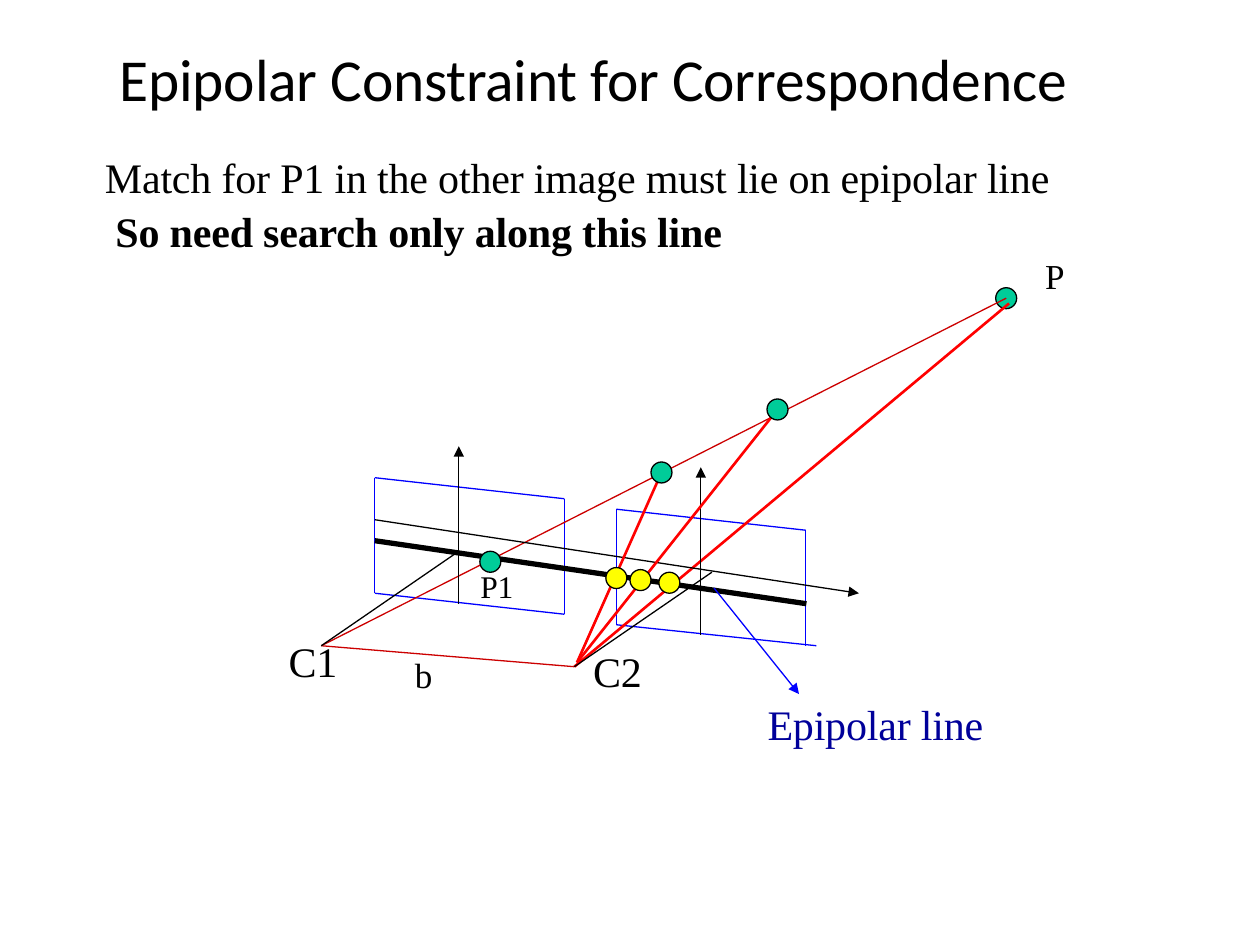
from dataclasses import dataclass

from lxml.etree import SubElement
from pptx import Presentation
from pptx.dml.color import RGBColor
from pptx.enum.shapes import MSO_CONNECTOR as Connector, MSO_SHAPE as Shape
from pptx.enum.text import MSO_ANCHOR as Anchor, PP_ALIGN as Align
from pptx.oxml.ns import qn
from pptx.util import Inches, Pt

COLUMNS, ROWS = 120, 90
WIDTH, HEIGHT = Inches(10), Inches(7.5)
BLACK, BLUE, NAVY = "000000", "0000FF", "00009A"
RED, DARK_RED, GREEN, YELLOW = "FF0000", "CC0000", "00CC99", "FFFF00"
SERIF = "Times New Roman"
DOT_SIZE = 2
PLANE_WIDTH, PLANE_HEIGHT, PLANE_SKEW = 18.05, 11, 2

Point = tuple[float, float]


@dataclass
class Line:
    start: Point
    end: Point
    color: str = BLACK
    weight: float = 0.75
    arrow: bool = False


@dataclass
class Dot:
    center: Point
    color: str


@dataclass
class Label:
    text: str
    corner: Point
    size: Point
    points: float = 24
    color: str = BLACK


def column(count: float) -> int:
    return round(WIDTH * count / COLUMNS)


def row(count: float) -> int:
    return round(HEIGHT * count / ROWS)


def area(corner: Point, size: Point) -> tuple[int, int, int, int]:
    return column(corner[0]), row(corner[1]), column(size[0]), row(size[1])


def rgb(color: str) -> RGBColor:
    return RGBColor.from_string(color)


def draw_line(page, line: Line) -> None:
    (x1, y1), (x2, y2) = line.start, line.end
    connector = page.shapes.add_connector(
        Connector.STRAIGHT, column(x1), row(y1), column(x2), row(y2))
    connector.line.color.rgb = rgb(line.color)
    connector.line.width = Pt(line.weight)
    if line.arrow:
        SubElement(connector.line._get_or_add_ln(), qn("a:tailEnd"), type="triangle")
    SubElement(connector._element.spPr, qn("a:effectLst"))


def draw_dot(page, dot: Dot) -> None:
    corner = dot.center[0] - DOT_SIZE / 2, dot.center[1] - DOT_SIZE / 2
    oval = page.shapes.add_shape(Shape.OVAL, *area(corner, (DOT_SIZE, DOT_SIZE)))
    oval.shadow.inherit = False
    oval.fill.solid()
    oval.fill.fore_color.rgb = rgb(dot.color)
    oval.line.color.rgb = rgb(BLACK)
    oval.line.width = Pt(0.75)


def plane_edges(corner: Point, overhang: float = 0) -> list[Line]:
    """Skewed image plane; its lower edge may run past the right corner."""
    left, top = corner
    right, bottom = left + PLANE_WIDTH, top + PLANE_HEIGHT
    edges = [
        ((left, top), (left, bottom)),
        ((left, top), (right, top + PLANE_SKEW)),
        ((right, top + PLANE_SKEW), (right, bottom + PLANE_SKEW)),
        ((left, bottom), (right + overhang, bottom + PLANE_SKEW)),
    ]
    return [Line(start, end, BLUE) for start, end in edges]


def clear_margins(frame, wrap: bool) -> None:
    settings = {"margin_left": 0, "margin_top": 0, "margin_right": 0,
                "margin_bottom": 0, "word_wrap": wrap}
    for name, value in settings.items():
        setattr(frame, name, value)


def write(para, text: str, points: float, color: str = BLACK,
          face: str = SERIF, bold: bool = False) -> None:
    span = para.add_run()
    span.text = text
    for name, value in {"size": Pt(points), "name": face, "bold": bold}.items():
        setattr(span.font, name, value)
    span.font.color.rgb = rgb(color)
    span._r.get_or_add_rPr().set("spc", "-10")


def draw_label(page, label: Label) -> None:
    box = page.shapes.add_textbox(*area(label.corner, label.size))
    clear_margins(box.text_frame, False)
    para = box.text_frame.paragraphs[0]
    para.space_before = Pt(2)
    write(para, label.text, label.points, label.color)


def set_title(page) -> None:
    title = page.shapes.title
    places = area((2.5, 4), (108, 6.85))
    for name, value in zip(("left", "top", "width", "height"), places):
        setattr(title, name, value)
    clear_margins(title.text_frame, True)
    title.text_frame.vertical_anchor = Anchor.MIDDLE
    para = title.text_frame.paragraphs[0]
    para.alignment = Align.CENTER
    write(para, "Epipolar Constraint for Correspondence", 34, face="Calibri")


def draw_statement(page) -> None:
    box = page.shapes.add_textbox(*area((10, 14.4), (91.4, 13.7)))
    frame = box.text_frame
    clear_margins(frame, True)
    match, search, point = frame.paragraphs[0], frame.add_paragraph(), frame.add_paragraph()
    write(match, "Match for P1 in the other image must lie on epipolar line", 24)
    write(search, "So need search only along this line", 24, bold=True)
    write(point, "P", 20)
    match.space_before = search.space_before = Pt(2)
    search._p.get_or_add_pPr().set("marL", str(column(1)))
    point.alignment = Align.RIGHT
    point.line_spacing = Pt(23.4)


CAMERA_1, CAMERA_2 = (30.6, 61.5), (54.7, 63.5)
RAY_FOOT = (54.95, 63.1)
WORLD_POINT, NEAR_POINT, MIDDLE_POINT = (95.83, 28.4), (63, 45), (74.05, 39)

LINES = [
    *plane_edges((35.7, 45.5)),
    *plane_edges((58.7, 48.5), overhang=1),
    Line(WORLD_POINT, CAMERA_1, DARK_RED),
    Line((96.1, 28.9), CAMERA_2, RED, 1.5),
    Line(CAMERA_1, CAMERA_2, DARK_RED),
    Line((35.7, 49.5), (81.8, 56.5), arrow=True),
    Line((35.7, 51.5), (76.8, 57.5), weight=3),
    Line(CAMERA_1, (43.7, 52.5)),
    Line(CAMERA_2, (67.8, 54.5)),
    Line((43.7, 57.5), (43.7, 42.5), arrow=True),
    Line((66.75, 60.5), (66.75, 44.5), arrow=True),
    Line(NEAR_POINT, RAY_FOOT, RED, 1.5),
    Line(MIDDLE_POINT, RAY_FOOT, RED, 1.5),
    Line((68, 56), (76.1, 66.1), BLUE, arrow=True),
]
DOTS = [
    *(Dot(center, GREEN) for center in [(46.7, 53.5), NEAR_POINT, MIDDLE_POINT]),
    *(Dot(center, YELLOW) for center in [(63.75, 55.5), (61, 55.25), (58.7, 55.05)]),
]
LABELS = [
    Label("C1", (27.5, 60.5), (5, 4.9)),
    Label("C2", (56.5, 61.5), (5, 4.9)),
    Label("b", (39.5, 62.2), (2, 4.2), 20),
    Label("P1", (45.75, 54), (3.5, 3.7), 18),
    Label("Epipolar line", (73.1, 66.5), (21.1, 4.9), color=NAVY),
]


def main() -> None:
    deck = Presentation()
    deck.slide_width, deck.slide_height = WIDTH, HEIGHT
    page = deck.slides.add_slide(deck.slide_layouts[5])
    set_title(page)
    draw_dot(page, Dot(WORLD_POINT, GREEN))
    for line in LINES:
        draw_line(page, line)
    for dot in DOTS:
        draw_dot(page, dot)
    for label in LABELS:
        draw_label(page, label)
    draw_statement(page)
    deck.save("out.pptx")


if __name__ == "__main__":
    main()
